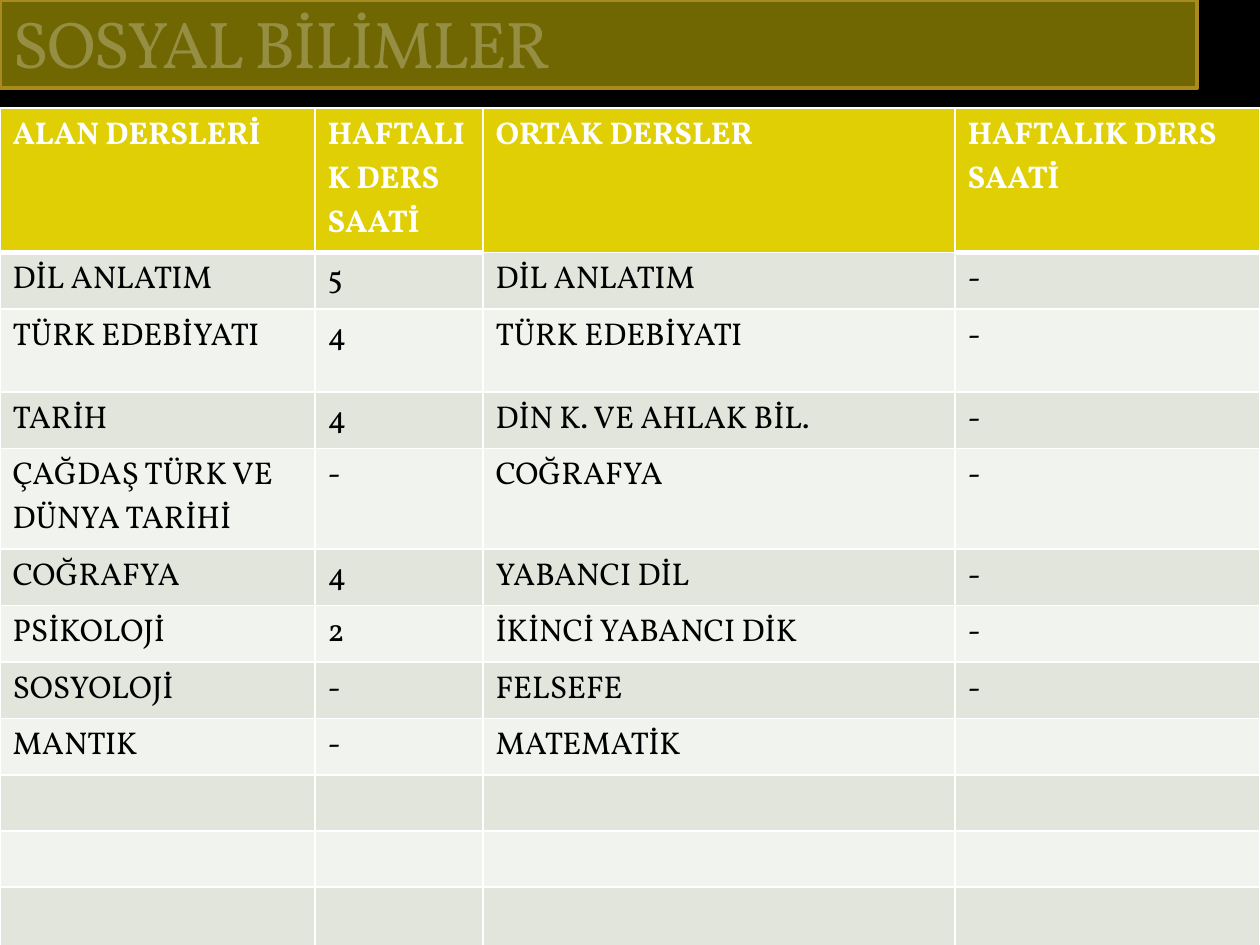
"""Build the weekly lesson hours slide for the social sciences branch."""
from lxml.etree import SubElement
from pptx import Presentation
from pptx.dml.color import RGBColor
from pptx.enum.text import MSO_ANCHOR, MSO_AUTO_SIZE, PP_ALIGN
from pptx.oxml.ns import qn
from pptx.util import Emu, Pt

BLACK = RGBColor(0x00, 0x00, 0x00)
WHITE = RGBColor(0xFF, 0xFF, 0xFF)
OLIVE = RGBColor(0x70, 0x67, 0x02)
GOLD = RGBColor(0xA8, 0x8A, 0x1E)
YELLOW = RGBColor(0xDF, 0xCF, 0x04)
MOSS = RGBColor(0x3C, 0x44, 0x22)
BANDS = (RGBColor(0xE1, 0xE5, 0xDC), RGBColor(0xF0, 0xF3, 0xEE))

COLUMNS = (315, 168, 472, 305)
ROW_HEIGHTS = (126, 56, 83, 56, 83) + (56,) * 6 + (88,)
LESSONS = (
    ("ALAN DERSLERİ", "HAFTALIK DERS SAATİ", "ORTAK DERSLER", "HAFTALIK DERS SAATİ"),
    ("DİL ANLATIM", "5", "DİL ANLATIM", "-"),
    ("TÜRK EDEBİYATI", "4", "TÜRK EDEBİYATI", "-"),
    ("TARİH", "4", "DİN K. VE AHLAK BİL.", "-"),
    ("ÇAĞDAŞ TÜRK VE DÜNYA TARİHİ", "-", "COĞRAFYA", "-"),
    ("COĞRAFYA", "4", "YABANCI DİL", "-"),
    ("PSİKOLOJİ", "2", "İKİNCİ YABANCI DİK", "-"),
    ("SOSYOLOJİ", "-", "FELSEFE", "-"),
    ("MANTIK", "-", "MATEMATİK", ""),
) + (("",) * 4,) * 3


def px(count):
    """Turn whole pixels into EMU."""
    return Emu(round(count * 914400 / 126))


def write(frame, text, size=18, color=BLACK, bold=False):
    """Put one formatted run into a text frame and return it."""
    para = frame.paragraphs[0]
    para.alignment = PP_ALIGN.LEFT
    span = para.add_run()
    span.text = text
    span.font.name = "Vollkorn"
    span.font.size = Pt(size)
    span.font.bold = bold
    span.font.color.rgb = color
    return span


def solid(parent, color, alpha=None):
    """Append a solid fill to a line element."""
    fill = SubElement(parent, qn("a:solidFill"))
    tone = SubElement(fill, qn("a:srgbClr"), val=str(color))
    if alpha is not None:
        SubElement(tone, qn("a:alpha"), val=str(alpha * 1000))


class LessonSlide:
    """Hold the slide and draw its elements in one style."""

    def __init__(self, deck):
        """Add a title-only page with a black background."""
        self.page = deck.slides.add_slide(deck.slide_layouts[5])
        self.page.background.fill.solid()
        self.page.background.fill.fore_color.rgb = BLACK

    def title(self, text, left, top, width, height):
        """Format the title placeholder as a framed band with faint text."""
        box = self.page.shapes.title
        box.left, box.top, box.width, box.height = map(px, (left, top, width, height))
        box.fill.solid()
        box.fill.fore_color.rgb = OLIVE
        box.line.color.rgb = GOLD
        box.line.width = Pt(2.5)
        frame = box.text_frame
        frame.auto_size = MSO_AUTO_SIZE.NONE
        frame.word_wrap = True
        frame.vertical_anchor = MSO_ANCHOR.BOTTOM
        span = write(frame, text, size=37.8, color=WHITE)
        style = span.font._element
        style.set("spc", "-100")
        SubElement(style.find(".//" + qn("a:srgbClr")), qn("a:alpha"), val="25000")
        outline = SubElement(style, qn("a:ln"), w="3175")
        solid(outline, MOSS, alpha=25)
        style.insert(0, outline)

    def border(self, cell, bottom):
        """Draw white cell edges with the given bottom width."""
        props = cell._tc.get_or_add_tcPr()
        for index, (side, width) in enumerate(zip("LRTB", (1, 1, 1, bottom))):
            edge = SubElement(props, qn(f"a:ln{side}"), w=str(Pt(width)))
            solid(edge, WHITE)
            props.insert(index, edge)

    def table(self, rows, left, top):
        """Add the lesson table with a header and banded rows."""
        width, height = sum(COLUMNS), sum(ROW_HEIGHTS)
        grid = self.page.shapes.add_table(
            len(rows), len(COLUMNS), *map(px, (left, top, width, height))).table
        for column, size in zip(grid.columns, COLUMNS):
            column.width = px(size)
        for row, size in zip(grid.rows, ROW_HEIGHTS):
            row.height = px(size)
        for r, row in enumerate(rows):
            header = r == 0
            for c, text in enumerate(row):
                cell = grid.cell(r, c)
                cell.fill.solid()
                cell.fill.fore_color.rgb = YELLOW if header else BANDS[(r - 1) % 2]
                self.border(cell, bottom=3 if header and c != 2 else 1)
                if text:
                    write(cell.text_frame, text, color=WHITE if header else BLACK, bold=header)


def main():
    """Build and save the deck."""
    deck = Presentation()
    deck.slide_width, deck.slide_height = px(1260), px(945)
    slide = LessonSlide(deck)
    slide.title("SOSYAL BİLİMLER", 0, 0, 1197, 88)
    slide.table(LESSONS, 0, 108)
    deck.save("out.pptx")


if __name__ == "__main__":
    main()
